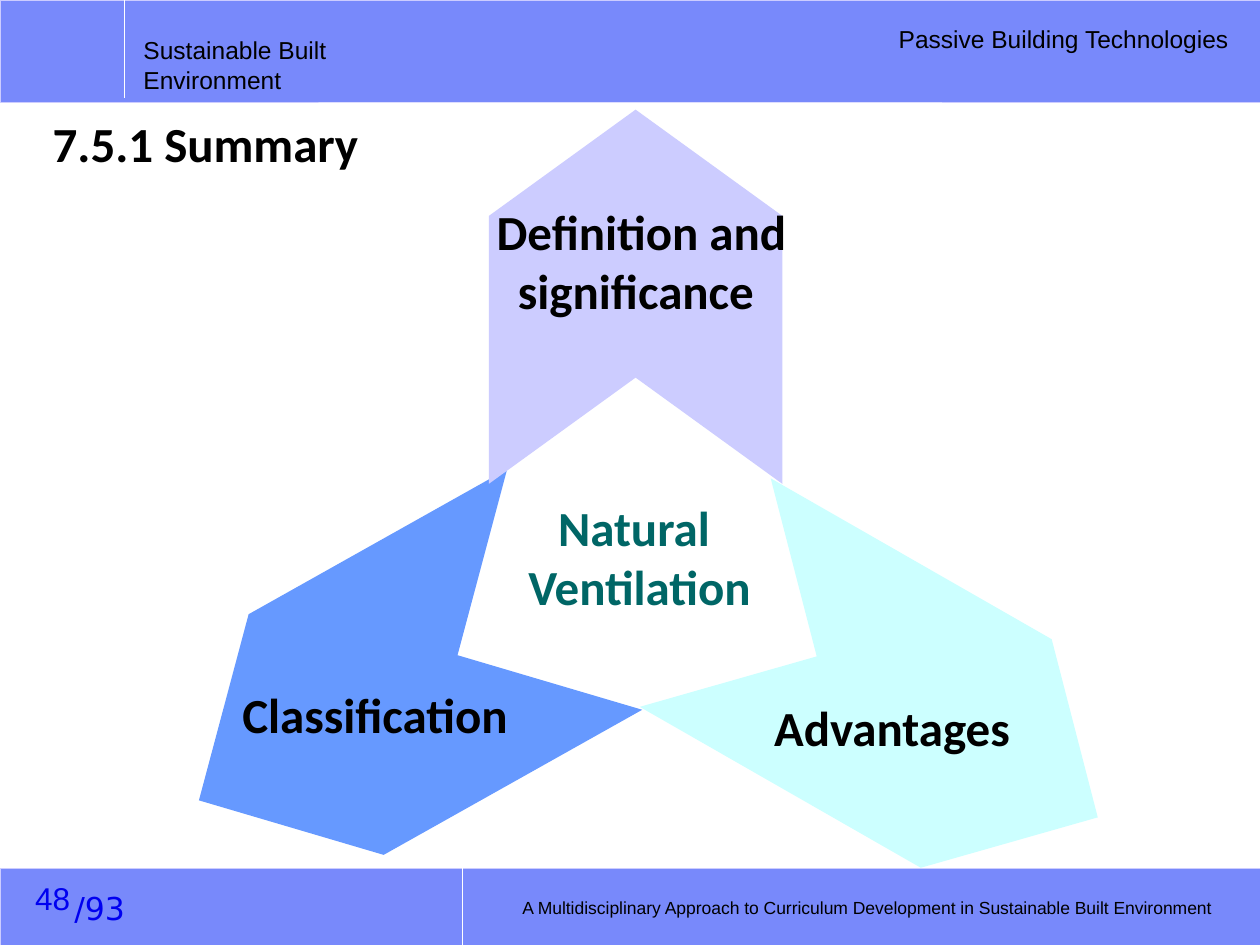
"""Build the natural ventilation summary slide."""
from lxml.etree import SubElement
from pptx import Presentation
from pptx.dml.color import RGBColor
from pptx.enum.shapes import MSO_CONNECTOR, MSO_SHAPE
from pptx.enum.text import MSO_ANCHOR, PP_ALIGN
from pptx.oxml.ns import qn
from pptx.util import Inches, Pt

WIDE, HIGH = 10, 7.5
HEAD, FOOT = 0.81, 6.89
BLUE = "0000F0"
LEFT, MID, RIGHT = PP_ALIGN.LEFT, PP_ALIGN.CENTER, PP_ALIGN.RIGHT

BANDS = [(0, FOOT, WIDE, HIGH - FOOT), (0, 0, WIDE, HEAD)]
RULES = [(0.99, 0, 0.78), (3.67, 6.88, HIGH)]
ARROWS = [
    ((1.36, 4.42, 3.42, 2.19), 150.7, 0.487, "6699FF"),
    ((3.56, 1.19, 2.97, 2.33), 270, 0.362, "CCCCFF"),
    ((5.36, 4.55, 3.59, 2.09), 29.8, 0.488, "CCFFFF"),
]
MARGINS = [
    ("Sustainable Built\vEnvironment", (1.04, 0.23, 2.79, 0.33), dict(size=14)),
    ("Passive Building Technologies", (7, 0.14, 2.85, 0.43), dict(size=14, align=RIGHT)),
    ("/93", (0.27, 7.01, 0.82, 0.4),
     dict(size=18, font="DejaVu Sans", color=BLUE, align=RIGHT)),
    ("A Multidisciplinary Approach to Curriculum Development in Sustainable Built Environment",
     (3.92, 7.07, 5.79, 0.27), dict(size=10, align=RIGHT, middle=True)),
    ("48", (0.18, 6.93, 2.33, 0.4), dict(size=18, color=BLUE, middle=True)),
]
LABELS = [
    ("Natural \nVentilation", (3.6, 3.9, 2.95, 1.03), dict(color="006666")),
    ("Definition and significance ", (3.8, 1.55, 2.58, 1.03), {}),
    ("Classification ", (1.44, 5.38, 3.16, 0.57), {}),
    ("Advantages", (5.66, 5.49, 2.84, 0.57), {}),
    ("7.5.1 Summary", (0.32, 0.95, 3.35, 0.43),
     dict(align=LEFT, middle=True, spacing=0.9)),
]


def paint(hue):
    return RGBColor.from_string(hue)


def place(box):
    return [Inches(n) for n in box]


def block(slide, kind, box, fill, edge=None):
    shape = slide.shapes.add_shape(kind, *place(box))
    shape.shadow.inherit = False
    shape.fill.solid()
    shape.fill.fore_color.rgb = paint(fill)
    if edge:
        shape.line.color.rgb = paint(edge)
        shape.line.width = Pt(0.25)
    else:
        shape.line.fill.background()
    return shape


def rule(slide, x, top, end):
    line = slide.shapes.add_connector(MSO_CONNECTOR.STRAIGHT, *place((x, top, x, end)))
    line.line.color.rgb = paint("FFFFFF")
    line.line.width = Pt(0.75)
    SubElement(line._element.spPr, qn("a:effectLst"))


def write(slide, text, box, size=28, font="Arial", color="000000", bold=False,
          align=LEFT, middle=False, spacing=None):
    frame = slide.shapes.add_textbox(*place(box)).text_frame
    frame.word_wrap = True
    frame.vertical_anchor = MSO_ANCHOR.MIDDLE if middle else MSO_ANCHOR.TOP
    frame.text = text
    for para in frame.paragraphs:
        para.alignment = align
        para.line_spacing = spacing
        for run in para.runs:
            run.font.name = font
            run.font.size = Pt(size)
            run.font.bold = bold
            run.font.color.rgb = paint(color)


def main():
    deck = Presentation()
    deck.slide_width, deck.slide_height = Inches(WIDE), Inches(HIGH)
    slide = deck.slides.add_slide(deck.slide_layouts[6])
    for box in BANDS:
        block(slide, MSO_SHAPE.RECTANGLE, box, "7889FB", "CCCCFF")
    for spot in RULES:
        rule(slide, *spot)
    for box, turn, notch, fill in ARROWS:
        arrow = block(slide, MSO_SHAPE.CHEVRON, box, fill)
        arrow.rotation = turn
        arrow.adjustments[0] = notch
    for text, box, style in MARGINS:
        write(slide, text, box, **style)
    for text, box, style in LABELS:
        write(slide, text, box, **{"font": "Calibri", "bold": True, "align": MID, **style})
    deck.save("out.pptx")


if __name__ == "__main__":
    main()
